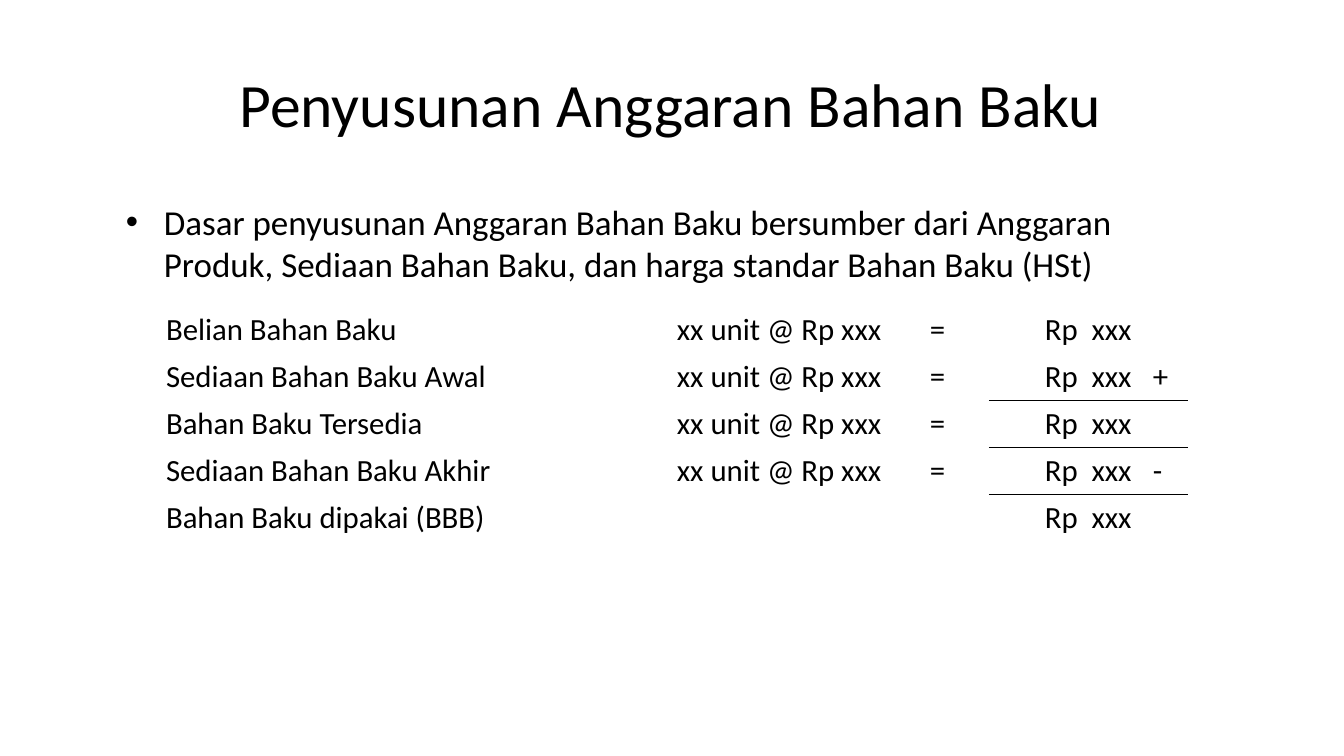
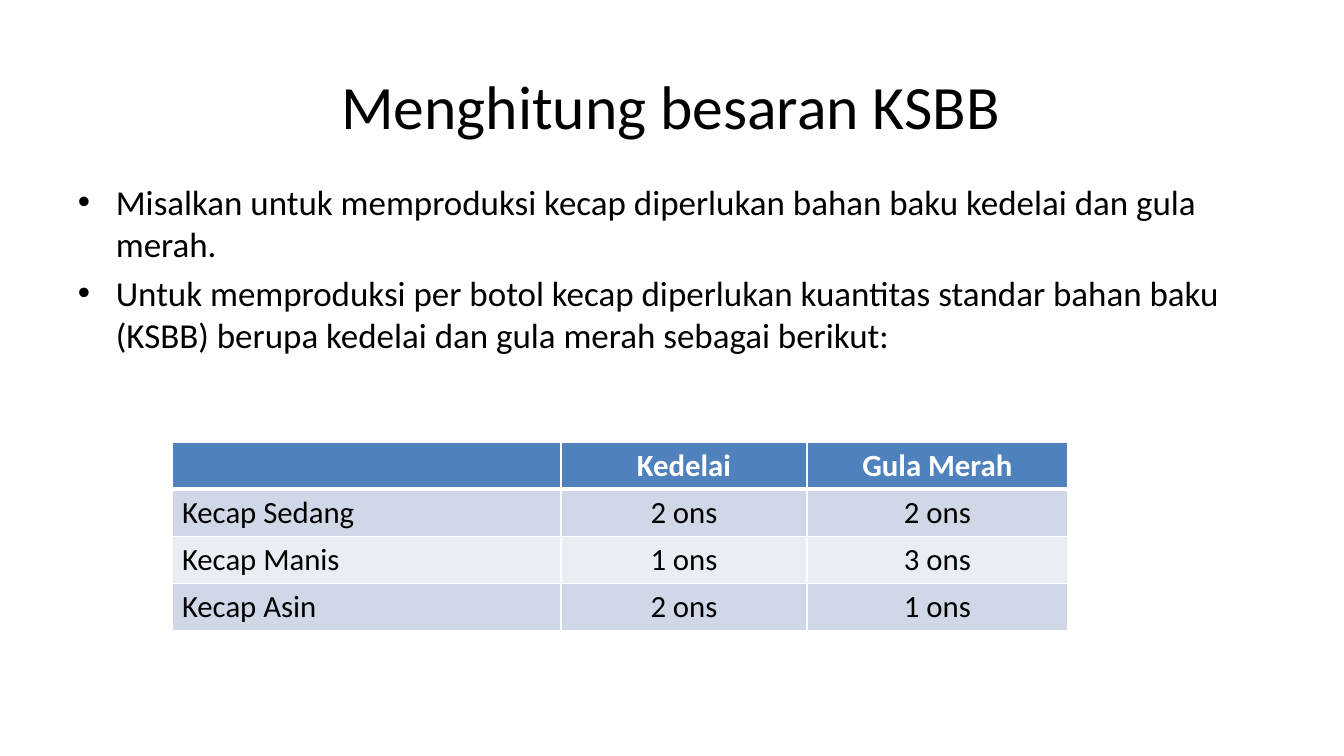
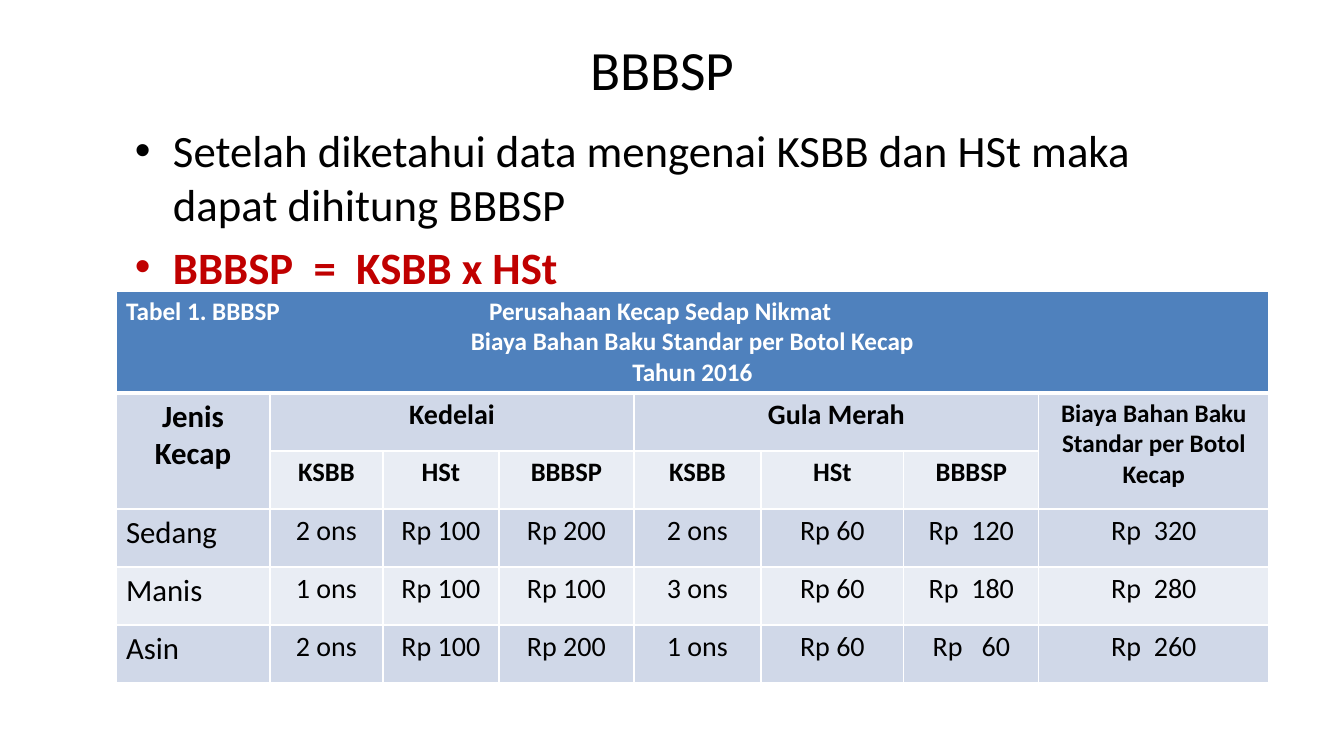
import pptx
import pptx.util
import pptx.dml.color
import pptx.enum.text
import pptx.oxml.ns
import lxml.etree

SCALE = 914400 / 100.8  # EMU in one px
FONT = "Calibri"
COLOURS = {"ink": "000000", "paper": "FFFFFF", "accent": "C00000",
           "header": "4F81BD", "band": "D0D8E8", "light": "E9EDF4"}
NO_STYLE = "{2D5ABB26-0587-4C30-8999-92F81FD0307C}"
LEFT, CENTER = pptx.enum.text.PP_ALIGN.LEFT, pptx.enum.text.PP_ALIGN.CENTER
qn = pptx.oxml.ns.qn


def px(length):
    return pptx.util.Emu(round(length * SCALE))


def write_line(frame, index, text, size, colour="ink", bold=False, align=LEFT):
    para = frame.paragraphs[0] if index == 0 else frame.add_paragraph()
    para.alignment = align
    if text:
        span = para.add_run()
        span.text = text
        values = {"name": FONT, "size": pptx.util.Pt(size), "bold": bold}
        for name, value in values.items():
            setattr(span.font, name, value)
        span.font.color.rgb = pptx.dml.color.RGBColor.from_string(COLOURS[colour])
    return para


# Content of the slides
UNIT = "xx unit @ Rp xxx\t="
pages = [
    {"title": ("Penyusunan Anggaran Bahan Baku", 44, (142, 60, 1058, 86)),
     "body": (116, 196, 1111, 461), "body_size": 25,
     "bullets": [("Dasar penyusunan Anggaran Bahan Baku bersumber dari Anggaran Produk, "
                  "Sediaan Bahan Baku, dan harga standar Bahan Baku (HSt)", "ink", False)],
     "table": {
         "corner": (156, 306), "columns": [476, 357, 199], "heights": [47] * 5,
         "rows": [["Belian Bahan Baku", UNIT, "Rp  xxx"],
                  ["Sediaan Bahan Baku Awal", UNIT, "Rp  xxx\t+"],
                  ["Bahan Baku Tersedia", UNIT, "Rp  xxx"],
                  ["Sediaan Bahan Baku Akhir", UNIT, "Rp  xxx\t-"],
                  ["Bahan Baku dipakai (BBB)", "", "Rp  xxx"]],
         "sizes": [[22] * 3] * 5, "header_rows": 0, "filled": False,
         "margins": {1: 45, 2: 56}, "tabs": {1: 253, 2: 108},
         "sum_rules": [1, 2, 3], "merges": []}},
    {"title": ("Menghitung besaran KSBB", 44, (142, 62, 1058, 86)),
     "body": (68, 176, 1210, 499), "body_size": 25,
     "bullets": [("Misalkan untuk memproduksi kecap diperlukan bahan baku kedelai dan gula merah.",
                  "ink", False),
                 ("Untuk memproduksi per botol kecap diperlukan kuantitas standar bahan baku "
                  "(KSBB) berupa kedelai dan gula merah sebagai berikut:", "ink", False)],
     "table": {
         "corner": (172, 442), "columns": [389, 246, 261], "heights": [47] * 4,
         "rows": [["", "Kedelai", "Gula Merah"],
                  ["Kecap Sedang", "2 ons", "2 ons"],
                  ["Kecap Manis", "1 ons", "3 ons"],
                  ["Kecap Asin", "2 ons", "1 ons"]],
         "sizes": [[22] * 3] * 4, "header_rows": 1, "filled": True,
         "margins": {}, "tabs": {}, "sum_rules": [], "merges": []}},
    {"title": ("BBBSP", 39.6, (124, 36, 1077, 64)),
     "body": (125, 118, 1104, 172), "body_size": 32,
     "bullets": [("Setelah diketahui data mengenai KSBB dan HSt maka dapat dihitung BBBSP",
                  "ink", False),
                 ("BBBSP  =  KSBB x HSt", "accent", True)],
     "table": {
         "corner": (116, 291), "columns": [154, 113, 116, 135, 127, 143, 135, 230],
         "heights": [102] + [58] * 5,
         "rows": [["Tabel 1. BBBSP\tPerusahaan Kecap Sedap Nikmat\n"
                   "Biaya Bahan Baku Standar per Botol Kecap\nTahun 2016"] + [""] * 7,
                  ["Jenis Kecap", "Kedelai", "", "", "Gula Merah", "", "",
                   "Biaya Bahan Baku Standar per Botol Kecap"],
                  [""] + ["KSBB", "HSt", "BBBSP"] * 2 + [""],
                  ["Sedang", "2 ons", "Rp 100", "Rp 200", "2 ons", "Rp 60", "Rp  120", "Rp  320"],
                  ["Manis", "1 ons", "Rp 100", "Rp 100", "3 ons", "Rp 60", "Rp  180", "Rp  280"],
                  ["Asin", "2 ons", "Rp 100", "Rp 200", "1 ons", "Rp 60", "Rp   60", "Rp  260"]],
         "sizes": [[18] * 8, [22] + [20] * 6 + [18], [19] * 8] + [[22] + [20] * 7] * 3,
         "header_rows": 3, "filled": True, "margins": {}, "tabs": {0: 363}, "sum_rules": [],
         "merges": [(0, 0, 0, 7), (1, 0, 2, 0), (1, 1, 1, 3), (1, 4, 1, 6), (1, 7, 2, 7)]}},
]

deck = pptx.Presentation()
deck.slide_width, deck.slide_height = px(1344), px(756)

for content in pages:
    page = deck.slides.add_slide(deck.slide_layouts[6])

    # Title
    text, size, place = content["title"]
    box = page.shapes.add_textbox(*map(px, place))
    box.text_frame.word_wrap = True
    box.text_frame.vertical_anchor = pptx.enum.text.MSO_ANCHOR.MIDDLE
    write_line(box.text_frame, 0, text, size, align=CENTER)

    # Bullets
    box = page.shapes.add_textbox(*map(px, content["body"]))
    box.text_frame.word_wrap = True
    size = content["body_size"]
    for index, (text, colour, bold) in enumerate(content["bullets"]):
        para = write_line(box.text_frame, index, text, size, colour, bold)
        if index:
            para.space_before = pptx.util.Pt(size * 0.2)
        settings = para._p.get_or_add_pPr()
        settings.set("marL", str(px(38)))
        settings.set("indent", str(-px(38)))
        lxml.etree.SubElement(settings, qn("a:buFont"), typeface="Arial")
        lxml.etree.SubElement(settings, qn("a:buChar"), char="•")

    # Table grid
    data = content["table"]
    rows, columns, heights = data["rows"], data["columns"], data["heights"]
    place = (*data["corner"], sum(columns), sum(heights))
    table = page.shapes.add_table(len(rows), len(columns), *map(px, place)).table
    table.first_row = table.horz_banding = False
    table._tbl.tblPr.find(qn("a:tableStyleId")).text = NO_STYLE
    for column, width in zip(table.columns, columns):
        column.width = px(width)
    for row, height in zip(table.rows, heights):
        row.height = px(height)

    # Table cells
    for r, row in enumerate(rows):
        header = r < data["header_rows"]
        for c, text in enumerate(row):
            cell = table.cell(r, c)
            if c in data["margins"]:
                cell.margin_left = px(data["margins"][c])
            colour = "paper" if data["filled"] and r == 0 else "ink"
            for index, line in enumerate(text.split("\n")):
                to_left = "\t" in line or not data["filled"] or (c == 0 and not header)
                para = write_line(cell.text_frame, index, line, data["sizes"][r][c],
                                  colour, header, LEFT if to_left else CENTER)
                if "\t" in line:
                    stops = lxml.etree.SubElement(para._p.get_or_add_pPr(), qn("a:tabLst"))
                    lxml.etree.SubElement(stops, qn("a:tab"), pos=str(px(data["tabs"][c])), algn="l")

            # Borders: white grid on filled tables, black sum rules on the plain one
            borders = {}
            if data["filled"]:
                borders = {"L": 1, "R": 1, "T": 3 if r == 1 else 1, "B": 3 if r == 0 else 1}
            elif c == 2:
                borders = {side: 1 for side, above in (("T", r - 1), ("B", r))
                           if above in data["sum_rules"]}
            for side, weight in borders.items():
                edge = lxml.etree.SubElement(cell._tc.get_or_add_tcPr(), qn("a:ln" + side),
                                             w=str(pptx.util.Pt(weight)))
                paint = lxml.etree.SubElement(edge, qn("a:solidFill"))
                lxml.etree.SubElement(paint, qn("a:srgbClr"),
                                      val=COLOURS["paper" if data["filled"] else "ink"])

            # Fill
            if data["filled"]:
                shade = "header" if r == 0 else "band" if r % 2 else "light"
                cell.fill.solid()
                cell.fill.fore_color.rgb = pptx.dml.color.RGBColor.from_string(COLOURS[shade])
            else:
                cell.fill.background()

    for top, left, bottom, right in data["merges"]:
        table.cell(top, left).merge(table.cell(bottom, right))

deck.save("out.pptx")
